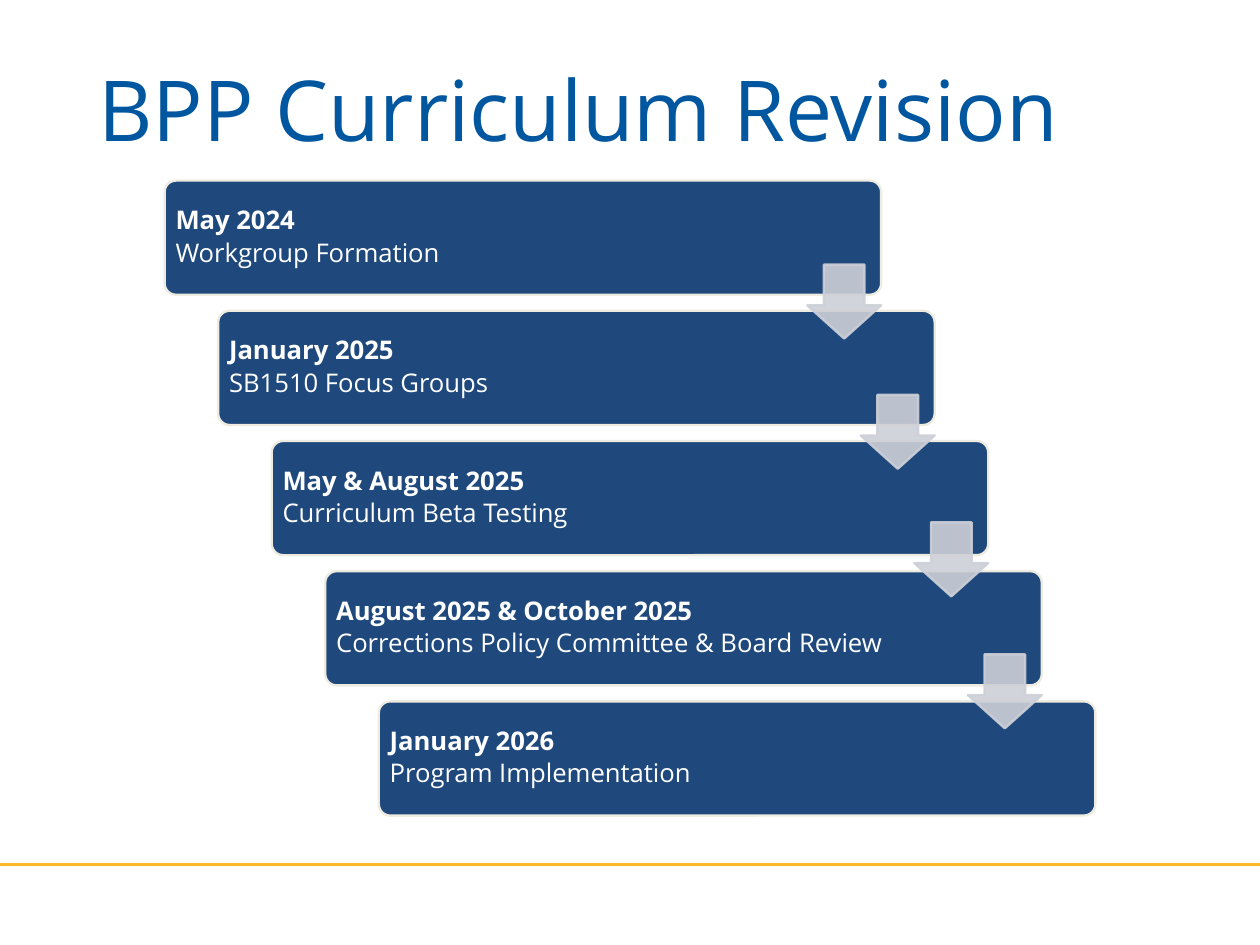
from dataclasses import dataclass

from lxml import etree
from pptx import Presentation
from pptx.dml.color import RGBColor
from pptx.enum.shapes import MSO_CONNECTOR, MSO_SHAPE
from pptx.enum.text import MSO_ANCHOR, PP_ALIGN
from pptx.oxml.ns import qn
from pptx.util import Pt

ROUNDED = MSO_SHAPE.ROUNDED_RECTANGLE
DOWN_ARROW = MSO_SHAPE.DOWN_ARROW
STRAIGHT = MSO_CONNECTOR.STRAIGHT
MIDDLE = MSO_ANCHOR.MIDDLE
LEFT = PP_ALIGN.LEFT


@dataclass(frozen=True)
class Theme:
    font: str = "Open Sans"
    title_color: str = "00569F"
    rule_color: str = "FDB928"
    card_fill: str = "1F497D"
    card_line: str = "EEECE1"
    card_text: str = "FFFFFF"
    arrow_color: str = "CDD0D7"
    arrow_opacity: int = 90
    title_size: float = 72
    card_size: float = 22
    outline: float = 2
    rule_width: float = 2.25


class TimelineSlide:
    def __init__(self, page, theme):
        self.page = page
        self.theme = theme

    def add_span(self, para, text, size, color, bold=False):
        span = para.add_run()
        span.text = text
        span.font.name = self.theme.font
        span.font.size = Pt(size)
        span.font.bold = bold
        span.font.color.rgb = RGBColor.from_string(color)

    def shape(self, kind, left, top, width, height, fill, line):
        shape = self.page.shapes.add_shape(kind, Pt(left), Pt(top), Pt(width), Pt(height))
        shape.shadow.inherit = False
        shape.fill.solid()
        shape.fill.fore_color.rgb = RGBColor.from_string(fill)
        shape.line.color.rgb = RGBColor.from_string(line)
        shape.line.width = Pt(self.theme.outline)
        return shape

    def title(self, text, left, top, width, height):
        box = self.page.shapes.add_textbox(Pt(left), Pt(top), Pt(width), Pt(height))
        frame = box.text_frame
        frame.word_wrap = True
        frame.margin_left = frame.margin_right = frame.margin_top = frame.margin_bottom = 0
        para = frame.paragraphs[0]
        para.line_spacing = Pt(60)
        self.add_span(para, text, self.theme.title_size, self.theme.title_color)

    def rule(self, left, right, top):
        line = self.page.shapes.add_connector(STRAIGHT, Pt(left), Pt(top), Pt(right), Pt(top))
        line.line.color.rgb = RGBColor.from_string(self.theme.rule_color)
        line.line.width = Pt(self.theme.rule_width)
        etree.SubElement(line._element.spPr, qn("a:effectLst"))

    def card(self, date, event, left, top, width, height):
        theme = self.theme
        card = self.shape(ROUNDED, left, top, width, height, theme.card_fill, theme.card_line)
        card.adjustments[0] = 0.1
        frame = card.text_frame
        frame.word_wrap = True
        frame.vertical_anchor = MIDDLE
        frame.margin_left = frame.margin_right = Pt(6.5)
        heading, detail = frame.paragraphs[0], frame.add_paragraph()
        for para, text, bold in ((heading, date, True), (detail, event, False)):
            para.alignment = LEFT
            para.line_spacing = 0.9
            self.add_span(para, text, theme.card_size, theme.card_text, bold)
        heading.space_after = Pt(4)

    def arrow(self, left, top, size):
        color = self.theme.arrow_color
        arrow = self.shape(DOWN_ARROW, left, top, size, size, color, color)
        arrow.adjustments[0] = 0.55
        arrow.adjustments[1] = 0.45
        for tint in arrow._element.spPr.iter(qn("a:srgbClr")):
            etree.SubElement(tint, qn("a:alpha"), val=str(self.theme.arrow_opacity * 1000))


MILESTONES = [
    ("May 2024", "Workgroup Formation"),
    ("January 2025", "SB1510 Focus Groups"),
    ("May & August 2025", "Curriculum Beta Testing"),
    ("August 2025 & October 2025", "Corrections Policy Committee & Board Review"),
    ("January 2026", "Program Implementation"),
]
CARD_LEFT, CARD_TOP, CARD_WIDTH, CARD_HEIGHT = 141.1, 154.8, 614.2, 97.9
STEP_RIGHT, STEP_DOWN = 45.9, 111.6
ARROW_SIZE = 63.4
ARROW_DROPS = [72, 72, 69.8, 71.3]  # from the top of each card


def main():
    deck = Presentation()
    deck.slide_width, deck.slide_height = Pt(1080), Pt(810)
    slide = TimelineSlide(deck.slides.add_slide(deck.slide_layouts[6]), Theme())

    slide.title("BPP Curriculum Revision", 84.2, 75.6, 948, 64)
    slide.rule(-16.6, 1096.6, 740.9)

    corners = [(CARD_LEFT + i * STEP_RIGHT, CARD_TOP + i * STEP_DOWN)
               for i in range(len(MILESTONES))]
    for (date, event), (left, top) in zip(MILESTONES, corners):
        slide.card(date, event, left, top, CARD_WIDTH, CARD_HEIGHT)
    for (left, top), drop in zip(corners, ARROW_DROPS):
        slide.arrow(left + CARD_WIDTH - ARROW_SIZE, top + drop, ARROW_SIZE)

    deck.save("out.pptx")


if __name__ == "__main__":
    main()
